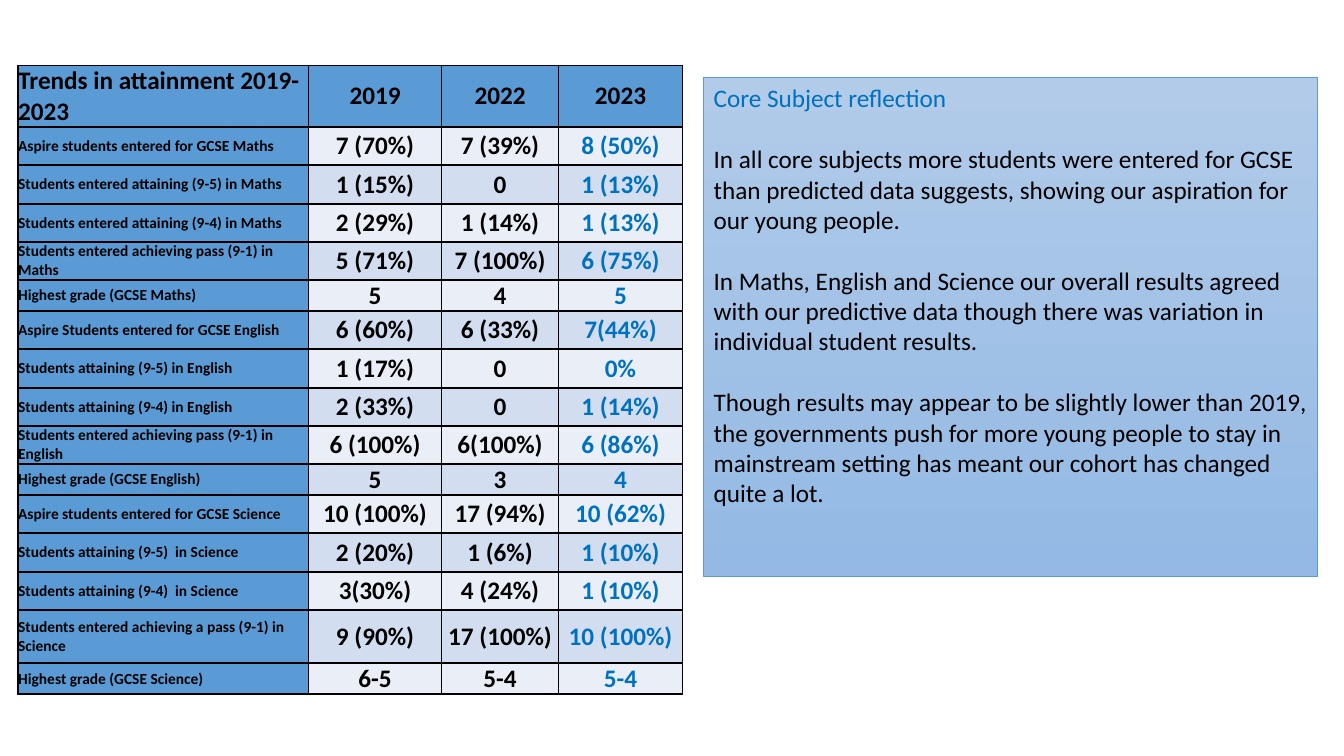
from dataclasses import dataclass

from lxml.etree import SubElement
from pptx import Presentation
from pptx.dml.color import RGBColor as RGB
from pptx.enum.shapes import MSO_SHAPE as Shape
from pptx.enum.text import MSO_ANCHOR as Anchor, PP_ALIGN as Align
from pptx.oxml.ns import qn
from pptx.util import Inches, Pt


@dataclass(frozen=True)
class Theme:
    font: str = "Calibri"
    body: Pt = Pt(18)
    label: Pt = Pt(11)
    ink: RGB = RGB(0, 0, 0)
    accent: RGB = RGB(0x00, 0x70, 0xC0)
    header: RGB = RGB(0x5B, 0x9B, 0xD5)
    bands: tuple = (RGB(0xEA, 0xEF, 0xF7), RGB(0xD2, 0xDE, 0xEF))
    gradient: tuple = (RGB(0xB1, 0xCB, 0xE9), RGB(0x93, 0xB9, 0xE4))
    grid: Pt = Pt(1.5)
    outline: Pt = Pt(0.5)
    paragraph_gap: Pt = Pt(22)


THEME = Theme()

HEADINGS = ("Trends in attainment 2019-2023", "2019", "2022", "2023")
COLUMN_WIDTHS = (2.88, 1.32, 1.16, 1.23)
HEADER_HEIGHT, TALL, NORMAL, SHORT = 0.53, 0.53, 0.38, 0.27

# Row height, measure, then one result per year
RESULTS = (
    (NORMAL, "Aspire students entered for GCSE Maths", "7 (70%)", "7 (39%)", "8 (50%)"),
    (NORMAL, "Students entered attaining (9-5) in Maths", "1 (15%)", "0", "1 (13%)"),
    (NORMAL, "Students entered attaining (9-4) in Maths", "2 (29%)", "1 (14%)", "1 (13%)"),
    (NORMAL, "Students entered achieving pass (9-1) in Maths", "5 (71%)", "7 (100%)", "6 (75%)"),
    (SHORT, "Highest grade (GCSE Maths)", "5", "4", "5"),
    (NORMAL, "Aspire Students entered for GCSE English", "6 (60%)", "6 (33%)", "7(44%)"),
    (NORMAL, "Students attaining (9-5) in English", "1 (17%)", "0", "0%"),
    (NORMAL, "Students attaining (9-4) in English", "2 (33%)", "0", "1 (14%)"),
    (NORMAL, "Students entered achieving pass (9-1) in English", "6 (100%)", "6(100%)", "6 (86%)"),
    (SHORT, "Highest grade (GCSE English)", "5", "3", "4"),
    (NORMAL, "Aspire students entered for GCSE Science", "10 (100%)", "17 (94%)", "10 (62%)"),
    (NORMAL, "Students attaining (9-5)  in Science", "2 (20%)", "1 (6%)", "1 (10%)"),
    (NORMAL, "Students attaining (9-4)  in Science", "3(30%)", "4 (24%)", "1 (10%)"),
    (TALL, "Students entered achieving a pass (9-1) in Science", "9 (90%)", "17 (100%)", "10 (100%)"),
    (SHORT, "Highest grade (GCSE Science)", "6-5", "5-4", "5-4"),
)

REFLECTION = (
    "Core Subject reflection",
    "In all core subjects more students were entered for GCSE than predicted data "
    "suggests, showing our aspiration for our young people.",
    "In Maths, English and Science our overall results agreed with our predictive "
    "data though there was variation in individual student results.",
    "Though results may appear to be slightly lower than 2019, the governments push "
    "for more young people to stay in mainstream setting has meant our cohort has "
    "changed quite a lot.",
)


def style_font(paragraph, size, color, bold=False):
    font = paragraph.font
    font.name, font.size, font.bold = THEME.font, size, bold
    font.color.rgb = color


def add_borders(cell):
    properties = cell._tc.get_or_add_tcPr()
    for side in ("a:lnL", "a:lnR", "a:lnT", "a:lnB"):
        line = SubElement(properties, qn(side), w=str(THEME.grid))
        fill = SubElement(line, qn("a:solidFill"))
        SubElement(fill, qn("a:srgbClr"), val=str(THEME.ink))


def fill_cell(cell, text, fill, size, color, align):
    cell.margin_left = cell.margin_right = cell.margin_top = cell.margin_bottom = 0
    cell.vertical_anchor = Anchor.MIDDLE
    add_borders(cell)
    cell.fill.solid()
    cell.fill.fore_color.rgb = fill
    cell.text = text
    paragraph = cell.text_frame.paragraphs[0]
    paragraph.alignment = align
    style_font(paragraph, size, color, bold=True)


def attainment_table(slide, left, top, width, height):
    rows = ((HEADER_HEIGHT, *HEADINGS), *RESULTS)
    table = slide.shapes.add_table(
        len(rows), len(HEADINGS),
        Inches(left), Inches(top), Inches(width), Inches(height),
    ).table
    for column, column_width in zip(table.columns, COLUMN_WIDTHS):
        column.width = Inches(column_width)

    latest = len(HEADINGS) - 1
    for r, (row_height, *texts) in enumerate(rows):
        table.rows[r].height = Inches(row_height)
        for c, text in enumerate(texts):
            is_header, is_label = r == 0, c == 0
            fill_cell(
                table.cell(r, c), text,
                fill=THEME.header if is_header or is_label else THEME.bands[(r - 1) % 2],
                size=THEME.label if is_label and not is_header else THEME.body,
                color=THEME.accent if c == latest and not is_header else THEME.ink,
                align=Align.LEFT if is_label else Align.CENTER,
            )


def reflection_panel(slide, left, top, width, height):
    panel = slide.shapes.add_shape(
        Shape.RECTANGLE, Inches(left), Inches(top), Inches(width), Inches(height))
    panel.shadow.inherit = False
    panel.fill.gradient()
    panel.fill.gradient_angle = 270
    for stop, color in zip(panel.fill.gradient_stops, THEME.gradient):
        stop.color.rgb = color
    panel.line.color.rgb = THEME.header
    panel.line.width = THEME.outline

    # Title, then the comments
    frame = panel.text_frame
    frame.word_wrap = True
    frame.vertical_anchor = Anchor.TOP
    for i, text in enumerate(REFLECTION):
        paragraph = frame.add_paragraph() if i else frame.paragraphs[0]
        paragraph.text = text
        paragraph.alignment = Align.LEFT
        if i:
            paragraph.space_before = THEME.paragraph_gap
        style_font(paragraph, THEME.body, THEME.ink if i else THEME.accent)


def main():
    deck = Presentation()
    deck.slide_width, deck.slide_height = Inches(13.33), Inches(7.5)
    slide = deck.slides.add_slide(deck.slide_layouts[6])
    attainment_table(slide, 0.18, 0.65, 6.59, 6.2)
    reflection_panel(slide, 6.98, 0.77, 6.09, 4.95)
    deck.save("out.pptx")


if __name__ == "__main__":
    main()
